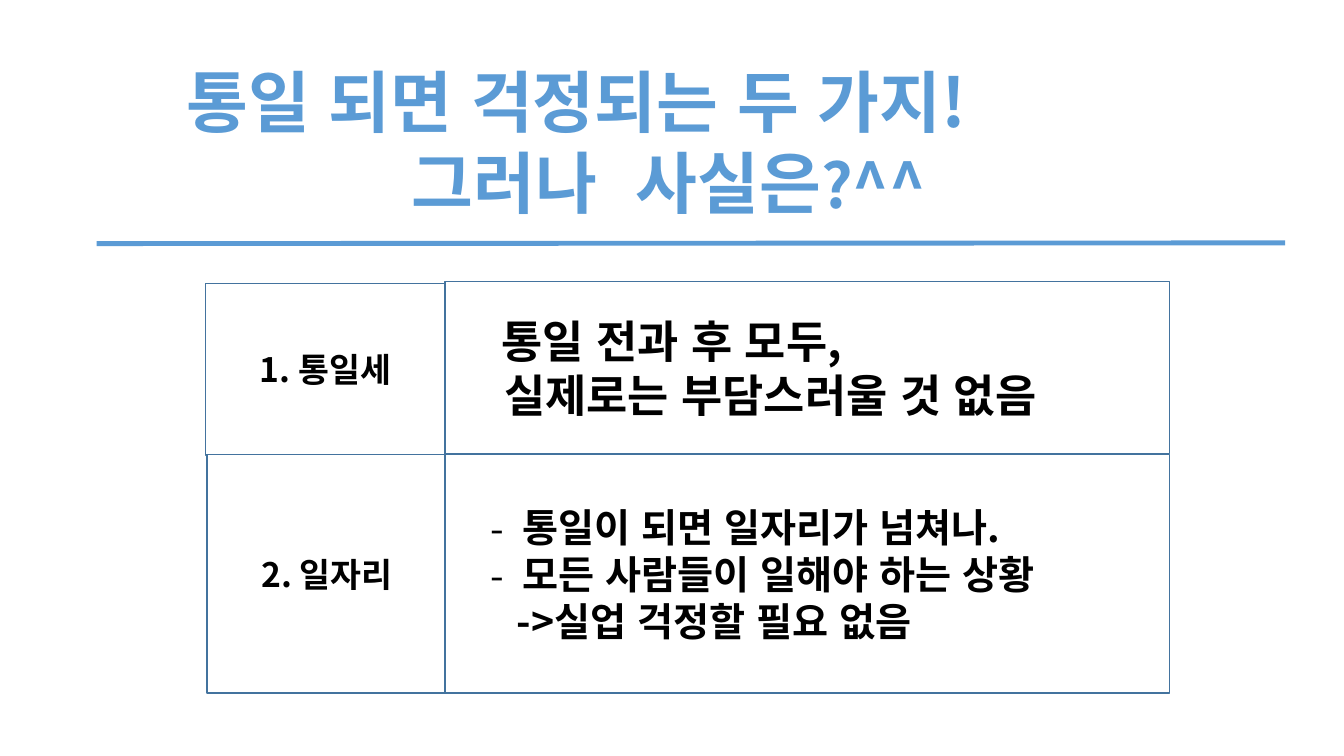
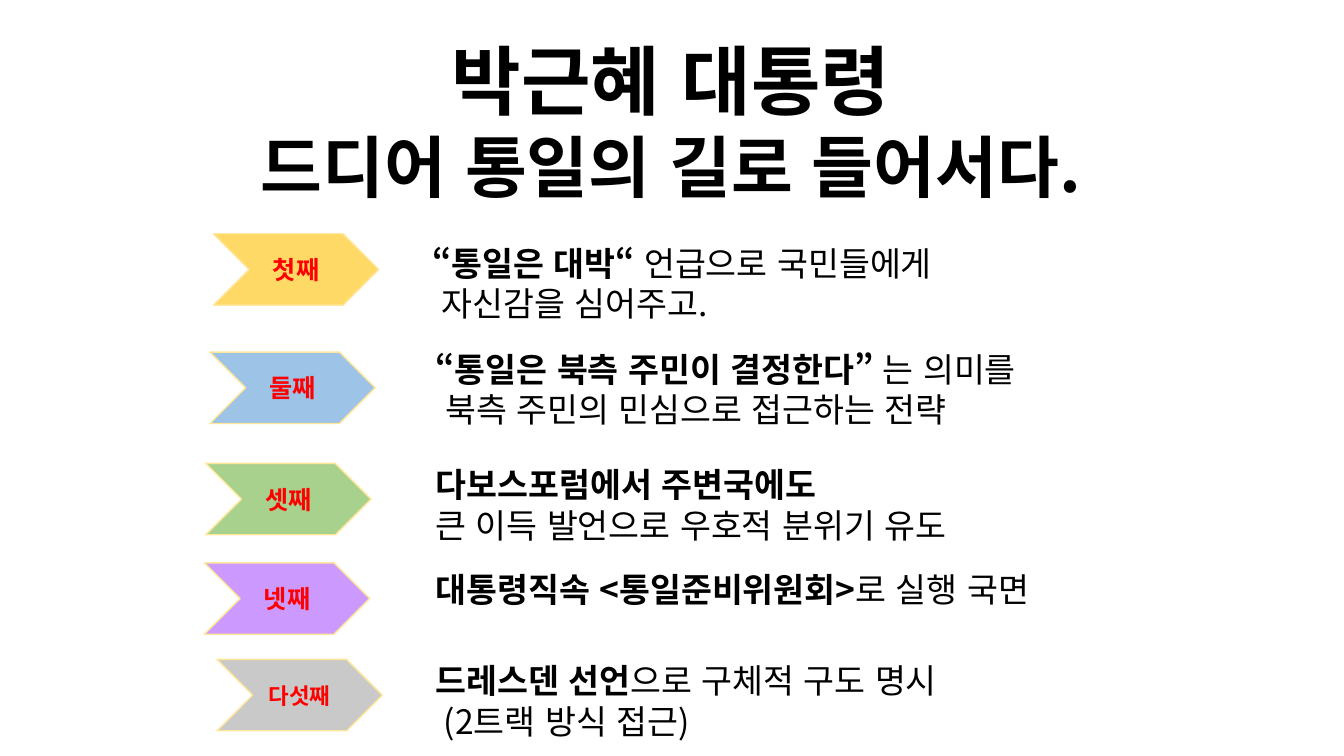
from dataclasses import dataclass
from lxml.etree import SubElement
from pptx import Presentation
from pptx.dml.color import RGBColor
from pptx.enum.lang import MSO_LANGUAGE_ID
from pptx.enum.shapes import MSO_CONNECTOR, MSO_SHAPE
from pptx.enum.text import MSO_ANCHOR, MSO_AUTO_SIZE, PP_ALIGN
from pptx.oxml.ns import qn
from pptx.util import Pt


@dataclass(frozen=True)
class Theme:
    font: str = "Noto Sans CJK KR"
    ink: str = "000000"
    blue: str = "5B9BD5"
    grid: str = "43739E"
    white: str = "FFFFFF"
    red: str = "FF0000"
    edge: str = "FFE699"
    huge: int = 54
    title: int = 48
    mark: int = 44
    big: int = 32
    mid: int = 28
    body: int = 24
    tag: int = 18
    small: int = 16


T = Theme()


@dataclass
class Line:
    text: str
    size: int = T.body
    tail: str = ""
    tail_size: int = 0
    tail_bold: bool = False
    bold: bool = True
    left: int = 0
    hang: int = 0
    gap: int = 0
    center: bool = False
    color: str = T.ink


WORRY = [
    Line("통일 되면 걱정되는 두 가지!", T.title, color=T.blue),
    Line("그러나 사실은", T.title, "?^^", T.mark, True,
         left=161, gap=14, color=T.blue),
]
CELLS = [
    ((147, 202.5, 171, 122.5), [Line("1. 통일세", center=True)]),
    ((318, 201, 517.5, 123),
     [Line("통일 전과 후 모두,", T.big, left=33),
      Line("실제로는 부담스러울 것 없음", T.big, left=35)]),
    ((148, 324.5, 171, 170.5), [Line("2. 일자리", center=True)]),
    ((318, 324.5, 517.5, 170.5),
     [Line("통일이 되면 일자리가 넘쳐나.", T.mid, left=48, hang=23),
      Line("모든 사람들이 일해야 하는 상황", T.mid, left=48, hang=23),
      Line("->실업 걱정할 필요 없음", T.mid, left=44)]),
]

PATH = [
    Line("박근혜 대통령", T.huge, center=True),
    Line("드디어 통일의 길로 들어서다.", T.title, center=True),
]
STEPS = [
    ("첫째", T.tag, "FFD966", (152.5, 167), (301.5, 170),
     [Line("“통일은 대박“ ", tail="언급으로 국민들에게"),
      Line("자신감을 심어주고.", bold=False, left=7)]),
    ("둘째", T.tag, "9DC3E6", (150, 251.5), (304, 245.5),
     [Line("“통일은 북측 주민이 결정한다” ", tail="는 의미를"),
      Line("북측 주민의 민심으로 접근하는 전략", bold=False, left=7)]),
    ("셋째", T.tag, "A9D18E", (147, 331), (304, 328),
     [Line("다보스포럼에서 주변국에도"),
      Line("큰 이득 발언으로 우호적 분위기 유도", bold=False)]),
    ("넷째", T.tag, "CC99FF", (146, 402), (304, 403),
     [Line("대통령직속 <통일준비위원회>", tail="로 실행 국면")]),
    ("다섯째", T.small, "C9C9C9", (155, 471), (304, 468),
     [Line("드레스덴 선언", tail="으로 구체적 구도 명시"),
      Line("(2트랙 방식 접근)", bold=False, left=6)]),
]


def rgb(code):
    return RGBColor.from_string(code)


def box(*nums):
    return [Pt(n) for n in nums]


def add_run(para, text):
    run = para.add_run()
    run.text = text
    run.font.language_id = MSO_LANGUAGE_ID.KOREAN
    return run


def write(frame, lines):
    for i, line in enumerate(lines):
        para = frame.add_paragraph() if i else frame.paragraphs[0]
        props = para._p.get_or_add_pPr()
        if line.left:
            props.set("marL", str(Pt(line.left)))
            props.set("indent", str(-Pt(line.hang)))
        if line.hang:
            SubElement(props, qn("a:buFont"), typeface=T.font)
            SubElement(props, qn("a:buChar"), char="-")
        para.alignment = PP_ALIGN.CENTER if line.center else PP_ALIGN.LEFT
        font = para.font
        font.size, font.bold, font.name = Pt(line.size), line.bold, T.font
        font.color.rgb = rgb(line.color)
        SubElement(font._element, qn("a:ea"), typeface=T.font)
        parts = line.text.partition(" ") if line.gap else [line.text]
        runs = [add_run(para, part) for part in parts]
        if line.gap:
            runs[1].font._element.set("spc", str(line.gap * 100))
        if line.tail:
            run = add_run(para, line.tail)
            run.font.bold = line.tail_bold
            if line.tail_size:
                run.font.size = Pt(line.tail_size)


def add_text(slide, place, lines):
    frame = slide.shapes.add_textbox(*box(*place)).text_frame
    frame.word_wrap = True
    frame.auto_size = MSO_AUTO_SIZE.SHAPE_TO_FIT_TEXT
    write(frame, lines)


def add_rule(slide, *ends):
    rule = slide.shapes.add_connector(MSO_CONNECTOR.STRAIGHT, *box(*ends))
    rule.line.color.rgb = rgb(T.blue)
    rule.line.width = Pt(3.5)
    SubElement(rule._element.spPr, qn("a:effectLst"))


def add_block(slide, kind, place, fill, edge, lines):
    block = slide.shapes.add_shape(kind, *box(*place))
    block.shadow.inherit = False
    block.fill.solid()
    block.fill.fore_color.rgb = rgb(fill)
    block.line.color.rgb = rgb(edge)
    block.line.width = Pt(1)
    block.text_frame.vertical_anchor = MSO_ANCHOR.MIDDLE
    write(block.text_frame, lines)


def main():
    deck = Presentation()
    deck.slide_width, deck.slide_height = box(960, 540)
    blank = deck.slide_layouts[6]

    slide = deck.slides.add_slide(blank)
    add_text(slide, (126, 39.5, 712, 124), WORRY)
    add_rule(slide, 69, 174, 918, 173.5)
    for place, lines in CELLS:
        add_block(slide, MSO_SHAPE.RECTANGLE, place, T.white, T.grid, lines)

    slide = deck.slides.add_slide(blank)
    add_text(slide, (122.5, 21, 713.5, 131), PATH)
    for label, size, fill, spot, place, lines in STEPS:
        add_text(slide, (*place, 522, 7 + 29 * len(lines)), lines)
        add_block(slide, MSO_SHAPE.CHEVRON, (*spot, 118, 51), fill, T.edge,
                  [Line(label, size, center=True, color=T.red)])

    deck.save("out.pptx")


if __name__ == "__main__":
    main()
